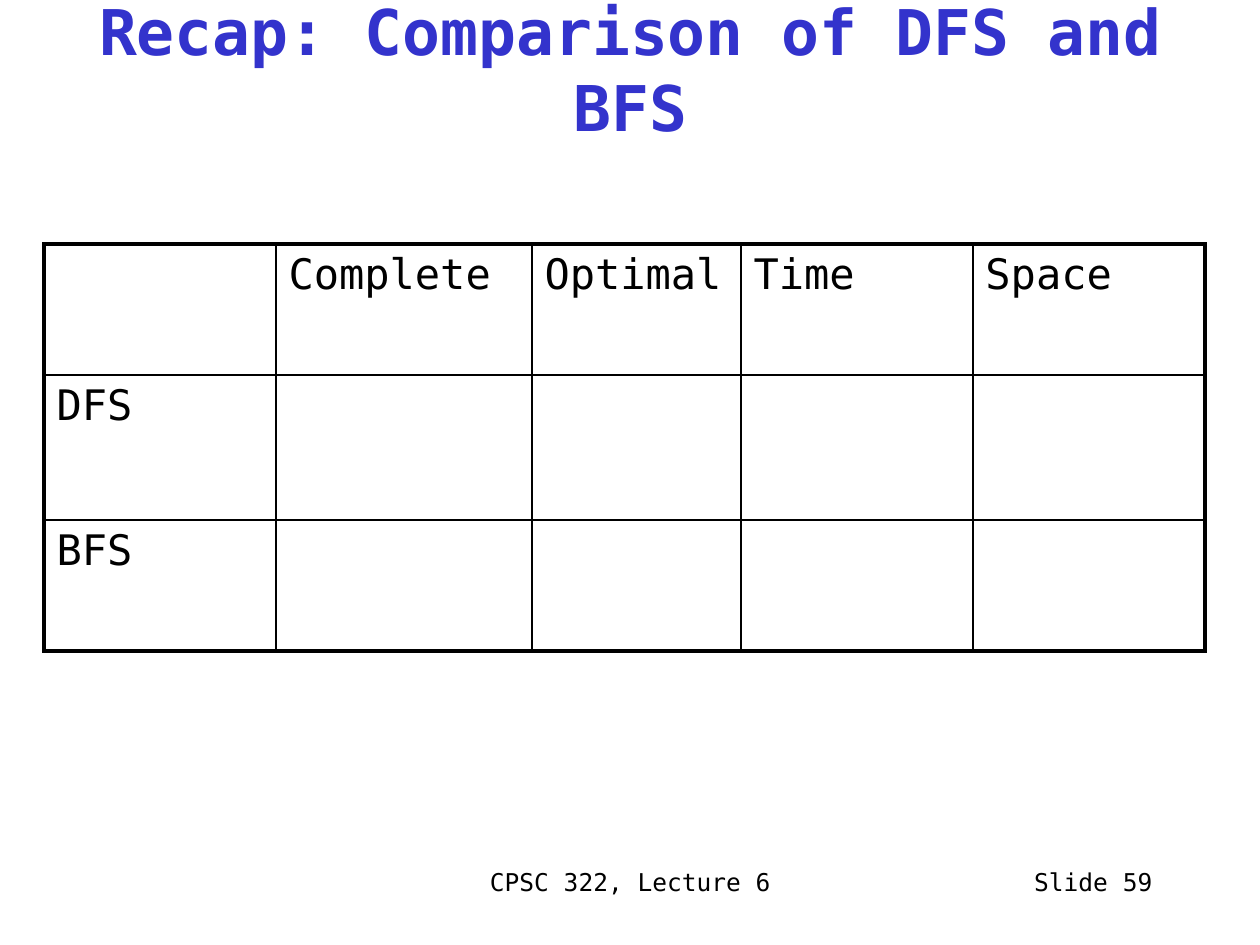
from dataclasses import dataclass

from lxml import etree
from pptx import Presentation
from pptx import util as u
from pptx.dml.color import RGBColor
from pptx.enum import text
from pptx.oxml.ns import qn

SCALE = 914400 / 126


def px(n):
    return u.Emu(round(n * SCALE))


@dataclass
class Theme:
    face: str = "DejaVu Sans Mono"
    ink: str = "000000"
    blue: str = "3333CC"
    paper: str = "FFFFFF"
    title: int = 36
    body: int = 24
    foot: int = 14
    thin: float = 1
    thick: float = 2.25


class Deck:
    """Holds the theme and the current slide, and draws each kind of element."""

    def __init__(self, theme):
        self.theme = theme
        self.prs = Presentation()
        self.prs.slide_width, self.prs.slide_height = px(1260), px(945)
        self.slide = self.prs.slides.add_slide(self.prs.slide_layouts[6])
        fill = self.slide.background.fill
        fill.solid()
        fill.fore_color.rgb = RGBColor.from_string(theme.paper)

    def run(self, para, words, size, color, bold=False):
        run = para.add_run()
        run.text = words
        font = run.font
        font.name, font.size, font.bold = self.theme.face, u.Pt(size), bold
        font.color.rgb = RGBColor.from_string(color)

    def label(self, box, words, size, color, align, anchor="TOP", bold=False):
        frame = self.slide.shapes.add_textbox(*map(px, box)).text_frame
        frame.word_wrap = True
        frame.vertical_anchor = text.MSO_ANCHOR[anchor]
        para = frame.paragraphs[0]
        para.alignment = text.PP_ALIGN[align]
        self.run(para, words, size, color, bold)

    def border(self, cell, side, width):
        props = cell._tc.get_or_add_tcPr()
        line = etree.SubElement(props, qn(f"a:ln{side}"), w=str(u.Pt(width)))
        fill = etree.SubElement(line, qn("a:solidFill"))
        etree.SubElement(fill, qn("a:srgbClr"), val=self.theme.ink)

    def table(self, left, top, cols, rows, data):
        t = self.theme
        box = map(px, (left, top, sum(cols), sum(rows)))
        grid = self.slide.shapes.add_table(len(rows), len(cols), *box).table
        grid.first_row = grid.horz_banding = False
        for col, wide in zip(grid.columns, cols):
            col.width = px(wide)
        for row, high in zip(grid.rows, rows):
            row.height = px(high)
        for r, line in enumerate(data):
            for c, words in enumerate(line):
                cell = grid.cell(r, c)
                edges = {
                    "L": c == 0,
                    "R": c == len(cols) - 1,
                    "T": r == 0,
                    "B": r == len(rows) - 1,
                }
                for side, outer in edges.items():
                    self.border(cell, side, t.thick if outer else t.thin)
                cell.fill.background()
                if words:
                    para = cell.text_frame.paragraphs[0]
                    self.run(para, words, t.body, t.ink)


def main():
    t = Theme()
    deck = Deck(t)
    deck.label((431, 861, 399, 63), "CPSC 322, Lecture 6", t.foot, t.ink, "CENTER")
    deck.label((903, 861, 262, 63), "Slide 59", t.foot, t.ink, "RIGHT")
    deck.label((42, 21, 1176, 95), "Recap: Comparison of DFS and BFS",
               t.title, t.blue, "CENTER", "MIDDLE", True)
    data = [
        ["", "Complete", "Optimal", "Time", "Space"],
        ["DFS"] + [""] * 4,
        ["BFS"] + [""] * 4,
    ]
    deck.table(44, 244, (232, 256, 209, 232, 232), (131, 145, 131), data)
    deck.prs.save("out.pptx")


if __name__ == "__main__":
    main()
